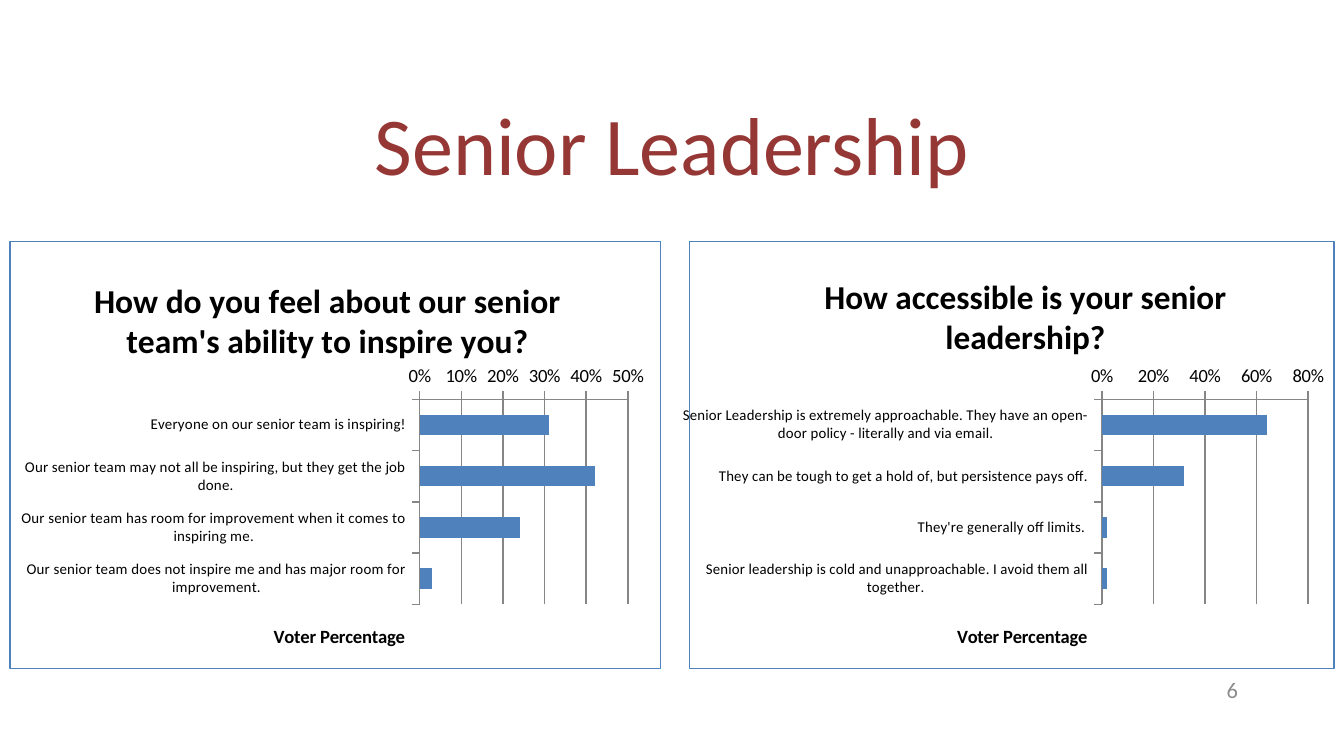
from dataclasses import dataclass

from lxml.etree import SubElement
from pptx import Presentation
from pptx.chart.axis import _BaseAxis as Axis
from pptx.chart.chart import Chart
from pptx.chart.data import CategoryChartData
from pptx.dml.color import RGBColor
from pptx.enum.chart import XL_CHART_TYPE as ChartType, XL_TICK_MARK as TickMark
from pptx.enum.text import MSO_ANCHOR as Anchor, PP_ALIGN as Align
from pptx.oxml import parse_xml
from pptx.oxml.ns import nsdecls, qn
from pptx.slide import Slide
from pptx.util import Pt

FONT = "Calibri"
BLACK = RGBColor(0x00, 0x00, 0x00)
WINE = RGBColor(0x95, 0x37, 0x35)
GRAY = RGBColor(0x8C, 0x8C, 0x8C)
AXIS_GRAY = RGBColor(0x86, 0x86, 0x86)
BLUE = RGBColor(0x4F, 0x81, 0xBD)
CHART_TOP, CHART_WIDTH, CHART_HEIGHT = 128.9, 349.2, 229.7


@dataclass(frozen=True)
class Label:
    text: str
    left: float
    top: float
    width: float
    height: float
    size: float
    color: RGBColor
    align: Align
    line_spacing: float = 1.0


@dataclass(frozen=True)
class Poll:
    question: str
    left: float
    answers: dict[str, float]
    maximum: float
    step: float
    question_at: tuple[float, float]
    axis_title_at: tuple[float, float]
    plot_at: tuple[float, float, float, float]


LABELS = [
    Label("Senior Leadership", 49.7, 40.3, 620.6, 78.5, 44, WINE, Align.CENTER, 0.9),
    Label("6", 508.3, 358.6, 162, 21.6, 12, GRAY, Align.RIGHT),
]

POLLS = [
    Poll(
        "How do you feel about our senior team's ability to inspire you?",
        5,
        {
            "Everyone on our senior team is inspiring!": 0.31,
            "Our senior team may not all be inspiring, but they get the job done.": 0.42,
            "Our senior team has room for improvement when it comes to inspiring me.": 0.24,
            "Our senior team does not inspire me and has major room for improvement.": 0.03,
        },
        0.5, 0.1, (0.12, 0.07), (0.4, 0.89), (0.63, 0.37, 0.32, 0.48),
    ),
    Poll(
        "How accessible is your senior leadership?",
        365.8,
        {
            "Senior Leadership is extremely approachable. They have an open-door policy - literally and via email.": 0.64,
            "They can be tough to get a hold of, but persistence pays off.": 0.32,
            "They're generally off limits. ": 0.02,
            "Senior leadership is cold and unapproachable. I avoid them all together. ": 0.02,
        },
        0.8, 0.2, (0.2, 0.06), (0.41, 0.89), (0.64, 0.37, 0.32, 0.48),
    ),
]


def add_label(page: Slide, label: Label) -> None:
    box = page.shapes.add_textbox(
        Pt(label.left), Pt(label.top), Pt(label.width), Pt(label.height)
    )
    frame = box.text_frame
    frame.word_wrap = True
    frame.vertical_anchor = Anchor.MIDDLE
    frame.text = label.text
    para = frame.paragraphs[0]
    para.alignment = label.align
    para.line_spacing = label.line_spacing
    font = para.runs[0].font
    font.name, font.size = FONT, Pt(label.size)
    font.color.rgb = label.color


def place(element, position: tuple[float, ...], inner: bool = False) -> None:
    for old in element.findall(qn("c:layout")):
        element.remove(old)
    layout = parse_xml(f"<c:layout {nsdecls('c')}/>")
    manual = SubElement(layout, qn("c:manualLayout"))
    if inner:
        SubElement(manual, qn("c:layoutTarget")).set("val", "inner")
    for mode in ("xMode", "yMode"):
        SubElement(manual, qn(f"c:{mode}")).set("val", "edge")
    for key, value in zip("xywh", position):
        SubElement(manual, qn(f"c:{key}")).set("val", str(value))
    text = element.find(qn("c:tx"))
    if text is None:
        element.insert(0, layout)
    else:
        text.addnext(layout)


def set_title(title, text: str, size: float, position: tuple[float, float]) -> None:
    title.text_frame.text = text
    font = title.text_frame.paragraphs[0].runs[0].font
    font.name, font.size, font.bold = FONT, Pt(size), True
    font.color.rgb = BLACK
    place(title._element, position)


def style_axis(axis: Axis, size: float) -> None:
    axis.major_tick_mark = TickMark.OUTSIDE
    axis.minor_tick_mark = TickMark.NONE
    axis.format.line.color.rgb = AXIS_GRAY
    axis.format.line.width = Pt(0.75)
    font = axis.tick_labels.font
    font.name, font.size = FONT, Pt(size)
    font.color.rgb = BLACK


def add_border(chart: Chart) -> None:
    border = parse_xml(
        f"<c:spPr {nsdecls('c', 'a')}><a:noFill/><a:ln w=\"{Pt(0.75)}\">"
        f'<a:solidFill><a:srgbClr val="{BLUE}"/></a:solidFill></a:ln></c:spPr>'
    )
    space = chart._chartSpace
    space.find(qn("c:chart")).addnext(border)
    corners = parse_xml(f"<c:roundedCorners {nsdecls('c')} val=\"0\"/>")
    space.find(qn("c:date1904")).addnext(corners)


def add_poll(page: Slide, poll: Poll) -> None:
    data = CategoryChartData(number_format="0%")
    data.categories = list(poll.answers)
    data.add_series("Series 1", list(poll.answers.values()))
    chart = page.shapes.add_chart(
        ChartType.BAR_CLUSTERED, Pt(poll.left), Pt(CHART_TOP),
        Pt(CHART_WIDTH), Pt(CHART_HEIGHT), data,
    ).chart
    chart.font.name, chart.font.size = FONT, Pt(10)
    chart.font.color.rgb = BLACK
    chart.has_legend = False
    set_title(chart.chart_title, poll.question, 18, poll.question_at)
    add_border(chart)

    plot = chart.plots[0]
    plot.gap_width = 150
    plot.vary_by_categories = False
    plot.series[0].format.fill.solid()
    plot.series[0].format.fill.fore_color.rgb = BLUE
    place(chart._chartSpace.chart.plotArea, poll.plot_at, inner=True)

    style_axis(chart.category_axis, 8)
    chart.category_axis.reverse_order = True
    values = chart.value_axis
    style_axis(values, 10)
    values.minimum_scale, values.maximum_scale = 0, poll.maximum
    values.major_unit = poll.step
    values.has_major_gridlines = True
    values.major_gridlines.format.line.color.rgb = AXIS_GRAY
    values.major_gridlines.format.line.width = Pt(0.75)
    values.tick_labels.number_format = "0%"
    values.tick_labels.number_format_is_linked = False
    set_title(values.axis_title, "Voter Percentage", 10, poll.axis_title_at)


def main() -> None:
    deck = Presentation()
    deck.slide_width, deck.slide_height = Pt(720), Pt(405)
    page = deck.slides.add_slide(deck.slide_layouts[6])
    for label in LABELS:
        add_label(page, label)
    for poll in POLLS:
        add_poll(page, poll)
    deck.save("out.pptx")


if __name__ == "__main__":
    main()
